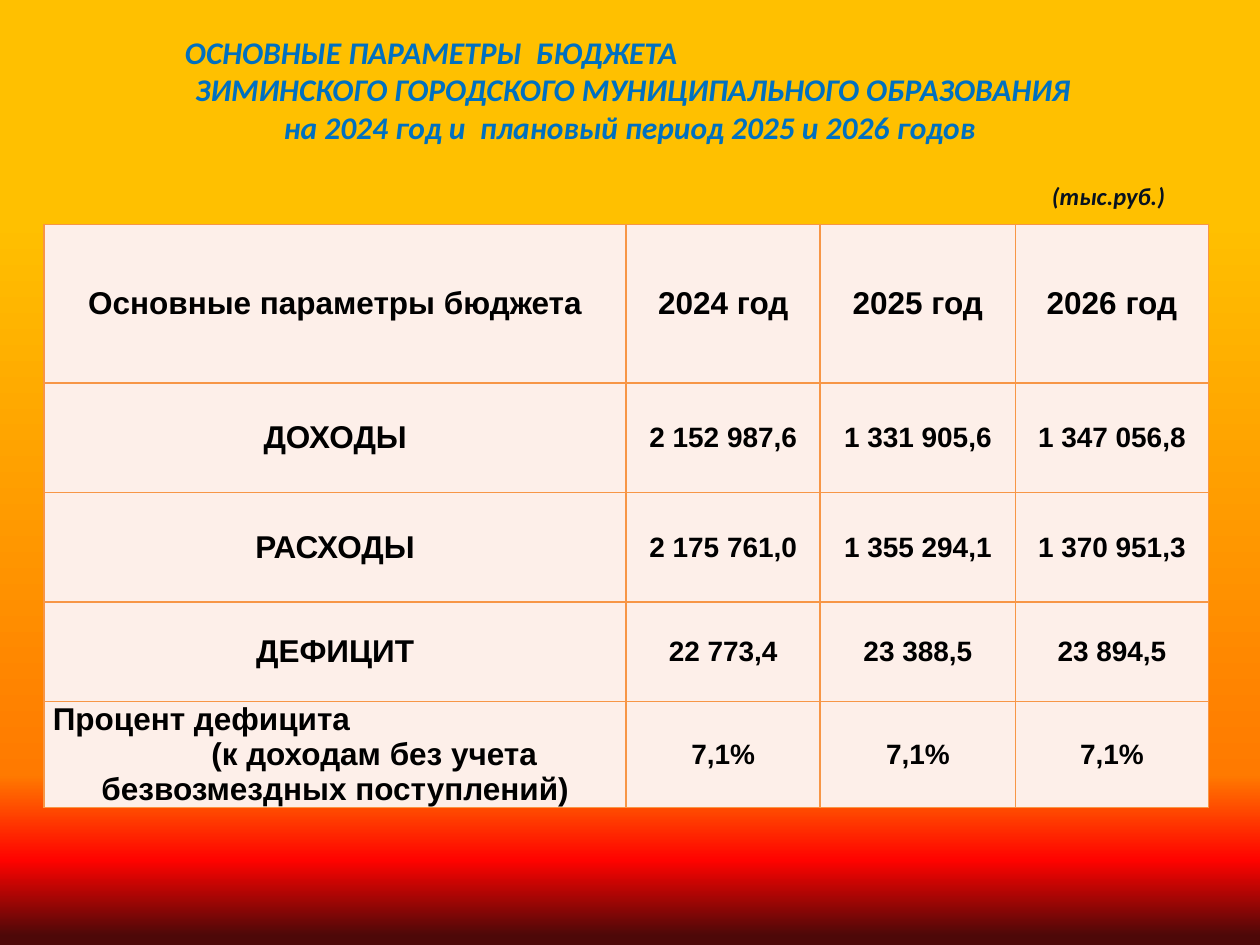
from typing import NamedTuple

import lxml.etree
import pptx
import pptx.dml.color
import pptx.enum.text
import pptx.oxml.ns
import pptx.util
from pptx.util import Inches

ALIGN = pptx.enum.text.PP_ALIGN
qn = pptx.oxml.ns.qn

CELL_FILL = "FDEFE9"
BORDER = "F79646"
BACKGROUND_STOPS = [(23, "FFC000"), (82, "FF7A00"), (91, "FF0300"), (99, "4D0808")]
COLUMN_WIDTHS = [4.62, 1.54, 1.55, 1.53]


class Line(NamedTuple):
    """One paragraph; left and indent are in inches."""
    text: str
    align: ALIGN = ALIGN.CENTER
    left: float = 0
    indent: float = 0


class Style(NamedTuple):
    size: int
    font: str
    color: str
    italic: bool = False


class BudgetRow(NamedTuple):
    height: float
    label: list[Line]
    values: list[str]
    value_size: int = 16


TITLE_STYLE = Style(18, "Calibri", "0070C0", italic=True)
UNIT_STYLE = Style(14, "Calibri", "08121F", italic=True)

TITLE = [
    Line("ОСНОВНЫЕ ПАРАМЕТРЫ  БЮДЖЕТА", ALIGN.LEFT, left=1.37),
    Line("ЗИМИНСКОГО ГОРОДСКОГО МУНИЦИПАЛЬНОГО ОБРАЗОВАНИЯ", left=0.05),
    Line("на 2024 год и  плановый период 2025 и 2026 годов"),
]
ROWS = [
    BudgetRow(1.26, [Line("Основные параметры бюджета")],
              ["2024 год", "2025 год", "2026 год"], value_size=18),
    BudgetRow(0.87, [Line("ДОХОДЫ")], ["2 152 987,6", "1 331 905,6", "1 347 056,8"]),
    BudgetRow(0.87, [Line("РАСХОДЫ")], ["2 175 761,0", "1 355 294,1", "1 370 951,3"]),
    BudgetRow(0.79, [Line("ДЕФИЦИТ")], ["22 773,4", "23 388,5", "23 894,5"]),
    BudgetRow(0.66,
              [Line("Процент дефицита", ALIGN.LEFT),
               Line("(к доходам без учета безвозмездных поступлений)", indent=0.62)],
              ["7,1%"] * 3),
]


def rgb(color: str) -> pptx.dml.color.RGBColor:
    return pptx.dml.color.RGBColor.from_string(color)


def write_lines(text_frame, lines: list[Line], style: Style) -> None:
    for index, line in enumerate(lines):
        paragraph = text_frame.add_paragraph() if index else text_frame.paragraphs[0]
        paragraph.text = line.text
        paragraph.alignment = line.align
        font = paragraph.font
        font.size = pptx.util.Pt(style.size)
        font.name = style.font
        font.bold = True
        font.italic = style.italic
        font.color.rgb = rgb(style.color)
        properties = paragraph._p.get_or_add_pPr()
        properties.set("marL", str(Inches(line.left)))
        properties.set("indent", str(Inches(line.indent)))


def add_text(slide, left: float, top: float, width: float, height: float,
             lines: list[Line], style: Style) -> None:
    box = slide.shapes.add_textbox(Inches(left), Inches(top), Inches(width), Inches(height))
    box.text_frame.word_wrap = True
    write_lines(box.text_frame, lines, style)


def append_color(parent, color: str) -> None:
    lxml.etree.SubElement(parent, qn("a:srgbClr"), val=color)


def set_background(slide) -> None:
    fill = slide.background.fill
    fill.gradient()
    fill.gradient_angle = 270
    stop_list = slide.element.find(".//" + qn("a:gsLst"))
    for stop in list(stop_list):
        stop_list.remove(stop)
    for percent, color in BACKGROUND_STOPS:
        append_color(lxml.etree.SubElement(stop_list, qn("a:gs"), pos=str(percent * 1000)), color)


def set_borders(cell) -> None:
    properties = cell._tc.get_or_add_tcPr()
    for index, side in enumerate(("a:lnL", "a:lnR", "a:lnT", "a:lnB")):
        border = lxml.etree.Element(qn(side), w=str(pptx.util.Pt(1)))
        append_color(lxml.etree.SubElement(border, qn("a:solidFill")), BORDER)
        properties.insert(index, border)


def fill_cell(cell, lines: list[Line], size: int) -> None:
    cell.fill.solid()
    cell.fill.fore_color.rgb = rgb(CELL_FILL)
    cell.vertical_anchor = pptx.enum.text.MSO_ANCHOR.MIDDLE
    cell.margin_left = cell.margin_right = Inches(0.07)
    cell.margin_top = cell.margin_bottom = 0
    write_lines(cell.text_frame, lines, Style(size, "Arial", "000000"))
    set_borders(cell)


def add_budget_table(slide) -> None:
    table = slide.shapes.add_table(len(ROWS), len(COLUMN_WIDTHS), Inches(0.35), Inches(1.78),
                                   Inches(9.25), Inches(4.68)).table
    table.first_row = table.horz_banding = False
    for column, width in zip(table.columns, COLUMN_WIDTHS):
        column.width = Inches(width)
    for row, budget in zip(table.rows, ROWS):
        row.height = Inches(budget.height)
        label, *values = row.cells
        fill_cell(label, budget.label, 18)
        for cell, value in zip(values, budget.values):
            fill_cell(cell, [Line(value)], budget.value_size)


def main() -> None:
    presentation = pptx.Presentation()
    presentation.slide_width = Inches(10)
    presentation.slide_height = Inches(7.5)
    slide = presentation.slides.add_slide(presentation.slide_layouts[6])
    set_background(slide)
    add_budget_table(slide)
    add_text(slide, 0, 0.21, 10, 1.01, TITLE, TITLE_STYLE)
    add_text(slide, 7.91, 1.39, 1.91, 0.34,
             [Line("(тыс.руб.)", ALIGN.LEFT, left=0.34)], UNIT_STYLE)
    presentation.save("out.pptx")


if __name__ == "__main__":
    main()
